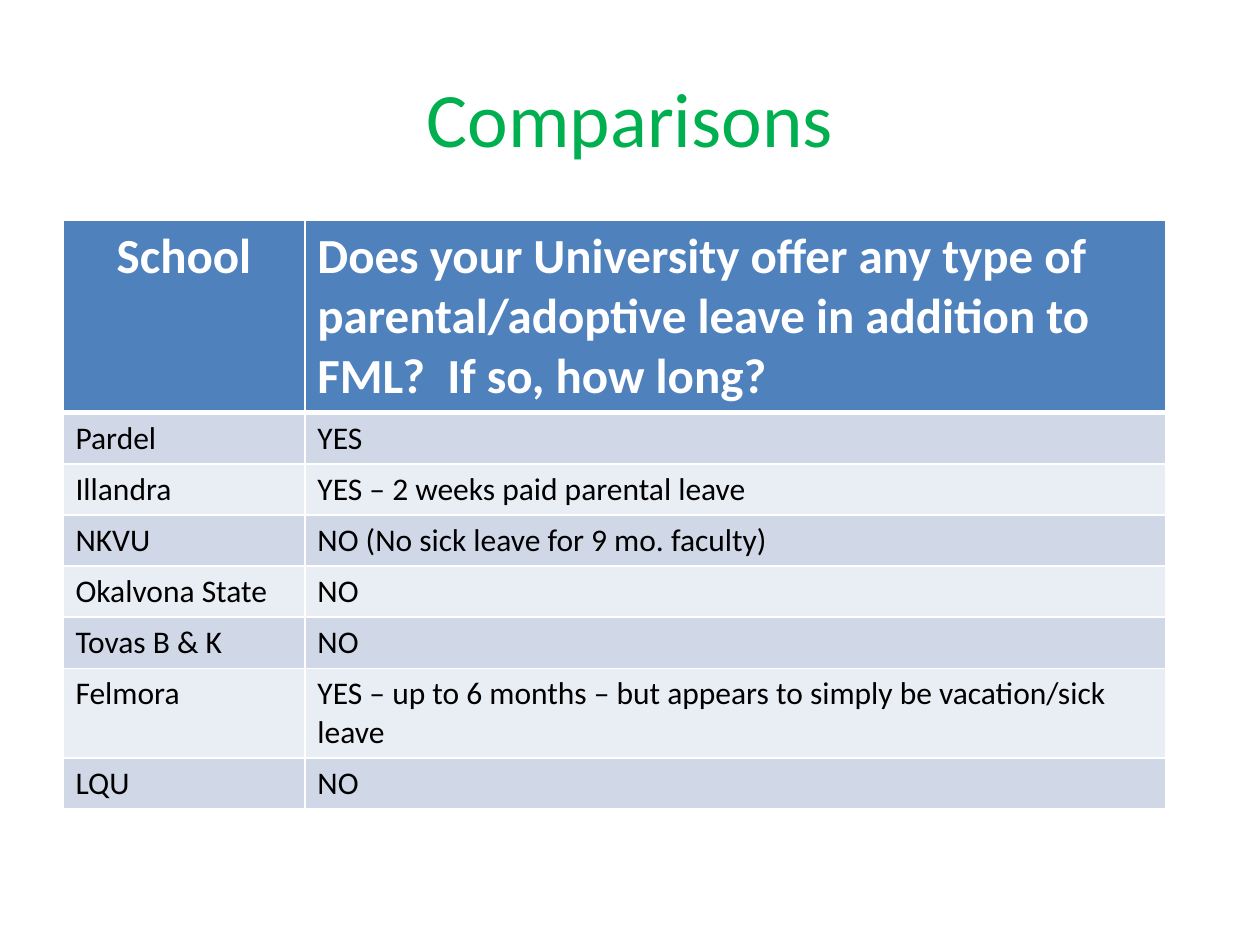
"""Build a slide comparing parental leave across universities."""
from lxml.etree import SubElement
from pptx import Presentation
from pptx.dml.color import RGBColor
from pptx.enum.text import MSO_ANCHOR, PP_ALIGN
from pptx.oxml.ns import qn
from pptx.util import Inches, Pt

TITLE = "Comparisons"
ROWS = [
    ("School", "Does your University offer any type of parental/adoptive leave "
               "in addition to FML?  If so, how long?"),
    ("Pardel", "YES"),
    ("Illandra", "YES – 2 weeks paid parental leave"),
    ("NKVU", "NO (No sick leave for 9 mo. faculty)"),
    ("Okalvona State", "NO"),
    ("Tovas B & K", "NO"),
    ("Felmora", "YES – up to 6 months – but appears to simply be vacation/sick leave"),
    ("LQU", "NO"),
]
COL_WIDTHS = (1.92, 6.83)
ROW_HEIGHT = 0.4
FONT = "Calibri"
GREEN = RGBColor(0x00, 0xB0, 0x50)
BLUE = RGBColor(0x4F, 0x81, 0xBD)
WHITE = RGBColor(0xFF, 0xFF, 0xFF)
BLACK = RGBColor(0x00, 0x00, 0x00)
BANDS = (RGBColor(0xE9, 0xED, 0xF4), RGBColor(0xD0, 0xD8, 0xE8))


def style(p, size, color, bold=False):
    """Set the font of a paragraph."""
    p.font.name = FONT
    p.font.size = Pt(size)
    p.font.color.rgb = color
    p.font.bold = bold


def set_borders(cell, widths):
    """Draw white borders, given as (side, points) in schema order."""
    tc_pr = cell._tc.get_or_add_tcPr()
    for i, (side, width) in enumerate(widths):
        line = SubElement(tc_pr, qn(f"a:ln{side}"), w=str(Pt(width)))
        fill = SubElement(line, qn("a:solidFill"))
        SubElement(fill, qn("a:srgbClr"), val=str(WHITE))
        tc_pr.insert(i, line)


def add_title(s):
    """Place and format the title."""
    title = s.shapes.title
    title.left, title.top = Inches(0.5), Inches(0.3)
    title.width, title.height = Inches(9), Inches(1.25)
    tf = title.text_frame
    tf.text = TITLE
    tf.vertical_anchor = MSO_ANCHOR.MIDDLE
    p = tf.paragraphs[0]
    p.alignment = PP_ALIGN.CENTER
    style(p, 44, GREEN)


def add_comparison(s):
    """Add the table with a header and banded rows."""
    table = s.shapes.add_table(
        len(ROWS), len(COL_WIDTHS), Inches(0.5), Inches(1.75),
        Inches(sum(COL_WIDTHS)), Inches(ROW_HEIGHT * len(ROWS))).table
    for column, width in zip(table.columns, COL_WIDTHS):
        column.width = Inches(width)
    for i, row in enumerate(ROWS):
        table.rows[i].height = Inches(ROW_HEIGHT)
        for j, text in enumerate(row):
            cell = table.cell(i, j)
            cell.text = text
            cell.fill.solid()
            p = cell.text_frame.paragraphs[0]
            if i == 0:
                cell.fill.fore_color.rgb = BLUE
                style(p, 28, WHITE, bold=True)
                set_borders(cell, [("L", 1), ("R", 1), ("T", 1), ("B", 3)])
            else:
                cell.fill.fore_color.rgb = BANDS[i % 2]
                style(p, 18, BLACK)
                top = 3 if i == 1 else 1
                set_borders(cell, [("L", 1), ("R", 1), ("T", top), ("B", 1)])
    table.cell(0, 0).text_frame.paragraphs[0].alignment = PP_ALIGN.CENTER


def main():
    """Create and save the presentation."""
    prs = Presentation()
    prs.slide_width, prs.slide_height = Inches(10), Inches(7.5)
    s = prs.slides.add_slide(prs.slide_layouts[5])
    add_title(s)
    add_comparison(s)
    prs.save("out.pptx")


if __name__ == "__main__":
    main()
